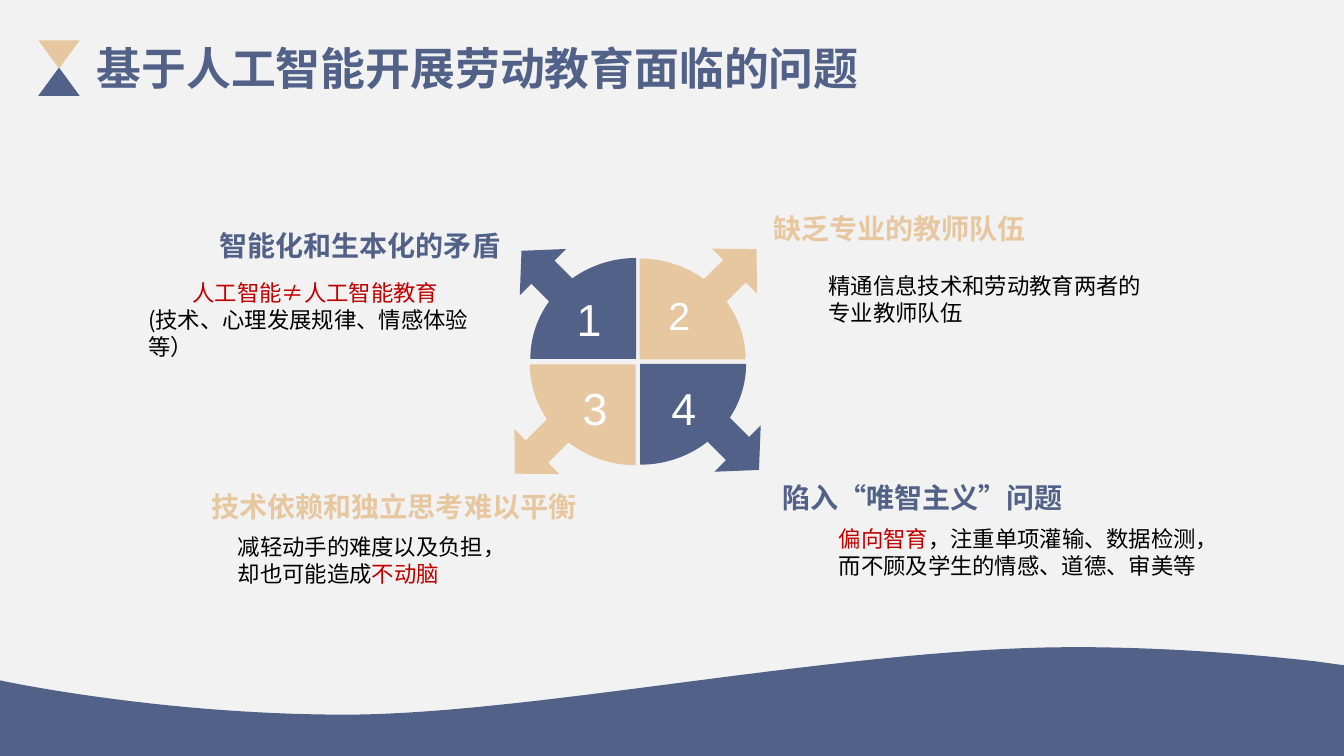
import pptx
import pptx.util
import pptx.dml.color
import pptx.enum.shapes
import pptx.enum.text
import pptx.oxml
import pptx.oxml.ns

Inches = pptx.util.Inches
RGBColor = pptx.dml.color.RGBColor
MSO_SHAPE = pptx.enum.shapes.MSO_SHAPE

NAVY = RGBColor(0x52, 0x61, 0x88)
SAND = RGBColor(0xE7, 0xC7, 0xA0)
RED = RGBColor(0xC0, 0, 0)
BLACK = RGBColor(0, 0, 0)
WHITE = RGBColor(0xFF, 0xFF, 0xFF)
PAPER = RGBColor(0xF2, 0xF2, 0xF2)
LATIN, CJK = "Arial", "Noto Sans CJK SC"

# Content: places are left, top, width, height in inches
TITLE = ("基于人工智能开展劳动教育面临的问题", (0.86, 0.35, 8.63, 0.64))

# heading, its font, colour, place, first-line indent
HEADINGS = [
    ("智能化和生本化的矛盾", CJK, NAVY, (2.08, 2.22, 4.27, 0.44), 0),
    ("缺乏专业的教师队伍", CJK, SAND, (7.57, 2.05, 2.76, 0.44), 0),
    ("技术依赖和独立思考难以平衡", LATIN, SAND, (1.94, 4.81, 4.41, 0.44), 0.06),
    ("陷入“唯智主义”问题", LATIN, NAVY, (7.66, 4.72, 3.28, 0.44), 0),
]

# place, then paragraphs of (first-line indent, [(text, colour), ...])
DETAILS = [
    ((1.37, 2.72, 3.75, 0.64), CJK, [
        (0.44, [("人工智能≠人工智能教育", RED)]),
        (0, [("(技术、心理发展规律、情感体验等）", BLACK)])]),
    ((8.12, 2.65, 3.42, 0.64), LATIN, [
        (0, [("精通信息技术和劳动教育两者的专业教师队伍", BLACK)])]),
    ((2.26, 5.24, 3, 0.64), LATIN, [
        (0, [("减轻动手的难度以及负担，却也可能造成", BLACK), ("不动脑", RED)])]),
    ((8.22, 5.16, 4.08, 0.64), LATIN, [
        (0, [("偏向智育", RED),
             ("，注重单项灌输、数据检测，而不顾及学生的情感、道德、审美等", BLACK)])]),
]

# number, its size and place
NUMBERS = [
    ("1", 32, (5.62, 2.84, 0.51, 0.58)),
    ("2", 28, (6.53, 2.84, 0.42, 0.57)),
    ("3", 32, (5.68, 3.73, 0.39, 0.64)),
    ("4", 32, (6.56, 3.73, 0.22, 0.64)),
]

# colour, arrow place and rotation, wedge place and rotation
QUADRANTS = [
    (NAVY, (5.06, 2.4, 0.65, 0.6), 315, (5.26, 2.56, 1.05, 1), 0),
    (SAND, (6.97, 2.38, 0.63, 0.62), 45, (6.37, 2.54, 1, 1.05), 90),
    (SAND, (5.01, 4.17, 0.63, 0.62), 225, (5.28, 3.59, 1, 1.05), 270),
    (NAVY, (6.99, 4.15, 0.65, 0.6), 135, (6.35, 3.61, 1.05, 1), 180),
]

HOURGLASS = [(NAVY, (0.38, 0.67, 0.41, 0.28), 0),
             (SAND, (0.38, 0.4, 0.41, 0.28), 180)]

# Top edge of the wave, right to left, as Bezier curves
WAVE_CURVES = [
    [(13.33, 6.6), (13.33, 6.6), (13.04, 6.56), (13.04, 6.56)],
    [(13.04, 6.56), (12.32, 6.48), (11.49, 6.42), (10.65, 6.42)],
    [(10.65, 6.42), (8.4, 6.42), (5.28, 7.09), (3.43, 7.09)],
    [(3.43, 7.09), (1.57, 7.09), (0, 6.75), (0, 6.75)],
]
WAVE_BASE = [(0, 7.53), (13.33, 7.53)]
CURVE_STEPS = 30


def box(place):
    return [Inches(length) for length in place]


def paint(shape, colour):
    shape.shadow.inherit = False
    shape.fill.solid()
    shape.fill.fore_color.rgb = colour
    shape.line.fill.background()


def add_part(shapes, kind, place, colour, rotation):
    part = shapes.add_shape(kind, *box(place))
    part.rotation = rotation
    paint(part, colour)


def add_text(shapes, place, paragraphs, size, font, bold=False, align=None):
    frame = shapes.add_textbox(*box(place)).text_frame
    frame.word_wrap = True
    frame.auto_size = pptx.enum.text.MSO_AUTO_SIZE.SHAPE_TO_FIT_TEXT
    for i, (indent, runs) in enumerate(paragraphs):
        paragraph = frame.paragraphs[0] if i == 0 else frame.add_paragraph()
        paragraph.alignment = align
        if indent:
            properties = paragraph._p.get_or_add_pPr()
            properties.set("marL", "0")
            properties.set("indent", str(Inches(indent)))
        for text, colour in runs:
            run = paragraph.add_run()
            run.text = text
            run.font.size = pptx.util.Pt(size)
            run.font.bold = bold
            run.font.color.rgb = colour
            run.font.name = font
            east_asian = pptx.oxml.ns.qn("a:ea")
            run.font._element.find(pptx.oxml.ns.qn("a:latin")).addnext(
                run.font._element.makeelement(east_asian, {"typeface": CJK}))


def bezier(points, t):
    weights = ((1 - t) ** 3, 3 * t * (1 - t) ** 2, 3 * t * t * (1 - t), t ** 3)
    return tuple(sum(w * p[axis] for w, p in zip(weights, points)) for axis in (0, 1))


deck = pptx.Presentation()
deck.slide_width, deck.slide_height = Inches(13.33), Inches(7.5)
slide = deck.slides.add_slide(deck.slide_layouts[6])
slide.background.fill.solid()
slide.background.fill.fore_color.rgb = PAPER

# Wave along the bottom
outline = [bezier(curve, step / CURVE_STEPS)
           for curve in WAVE_CURVES for step in range(1, CURVE_STEPS + 1)]
outline = [(Inches(x), Inches(y)) for x, y in outline + WAVE_BASE]
wave = slide.shapes.build_freeform(*outline[0])
wave.add_line_segments(outline[1:], close=True)
paint(wave.convert_to_shape(), NAVY)

# Hourglass and title
header = slide.shapes.add_group_shape().shapes
for colour, place, rotation in HOURGLASS:
    add_part(header, MSO_SHAPE.ISOSCELES_TRIANGLE, place, colour, rotation)
title, title_place = TITLE
add_text(header, title_place, [(0, [(title, NAVY)])], 32, LATIN, True,
         pptx.enum.text.PP_ALIGN.JUSTIFY)

# Wheel of four wedges with outward arrows
wheel = slide.shapes.add_group_shape().shapes
for colour, arrow, turn, _, _ in reversed(QUADRANTS):
    add_part(wheel, MSO_SHAPE.UP_ARROW, arrow, colour, turn)
for colour, _, _, wedge, turn in QUADRANTS:
    add_part(wheel, MSO_SHAPE.PIE_WEDGE, wedge, colour, turn)

# Numbers, headings and details
for number, size, place in NUMBERS:
    add_text(slide.shapes, place, [(0, [(number, WHITE)])], size, LATIN)
for heading, font, colour, place, indent in HEADINGS:
    add_text(slide.shapes, place, [(indent, [(heading, colour)])], 20, font, True)
for place, font, paragraphs in DETAILS:
    add_text(slide.shapes, place, paragraphs, 16, font)

deck.save("out.pptx")
